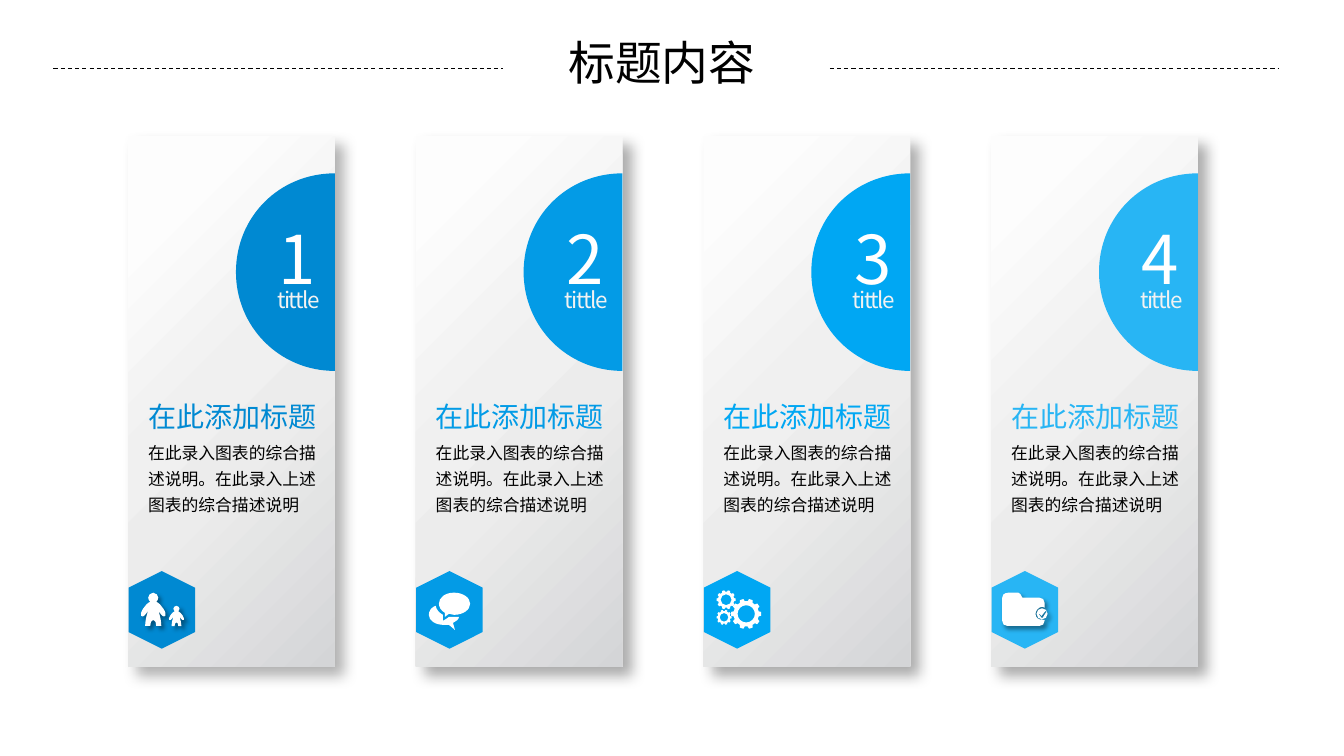
import dataclasses
import math

import pptx
import pptx.dml.color
import pptx.enum.dml
import pptx.enum.shapes
import pptx.enum.text
import pptx.oxml
import pptx.oxml.ns
import pptx.util

Inches = pptx.util.Inches
Pt = pptx.util.Pt
Kind = pptx.enum.shapes.MSO_SHAPE
Align = pptx.enum.text.PP_ALIGN
qn = pptx.oxml.ns.qn
NS = pptx.oxml.ns.nsdecls("a")


@dataclasses.dataclass(frozen=True)
class Theme:
    font: str = "Noto Sans CJK SC"
    ink: str = "000000"
    white: str = "FFFFFF"
    pale: str = "F2F2F2"
    blues: tuple = ("0089D2", "039BE6", "00A7F3", "28B5F4")
    greys: tuple = ((45, "F0F0F0"), (60, "ECECEC"), (100, "D4D5D7"))
    light: str = "FDFDFD"
    title: float = 33.4
    digit: float = 48
    label: float = 16
    head: float = 20
    body: float = 12


THEME = Theme()
HEAD = "在此添加标题"
BODY = "在此录入图表的综合描述说明。在此录入上述图表的综合描述说明"
FIRST, LAST, ICON_TOP = 1.27, 9.83, 5.72

HALF = [(98, 0), (98, 196), (43, 196, 0, 152, 0, 98), (0, 43, 43, 0, 98, 0)]
SIDE = [(0, 0), (3, 0, 5, 3, 5, 5), (5, 7, 4, 8, 3, 9),
        (8, 11, 14, 21, 12, 23), (10, 25, 8, 22, 5, 18),
        (7, 23, 8, 29, 8, 33), (3, 33), (3, 30, 2, 27, 0, 27)]
FRONT = [(38, 16), (29, 16, 23, 21, 23, 27), (23, 30, 25, 34, 29, 36),
         (29, 40), (33, 37), (35, 37, 36, 38, 38, 38),
         (47, 38, 54, 33, 54, 27), (54, 21, 47, 16, 38, 16)]
BACK = [(43, 40), (33, 40), (32, 41, 27, 44, 27, 44), (27, 38),
        (23, 36, 20, 32, 20, 29), (16, 30, 13, 34, 13, 38),
        (13, 44, 20, 48, 28, 48), (33, 48), (39, 53), (37, 46),
        (40, 45, 43, 42, 43, 40)]
FOLDER = [(44, 37), (44, 34, 47, 30, 51, 30), (53, 31), (53, 26),
          (53, 23, 51, 21, 48, 21), (31, 21), (30, 18, 28, 16, 27, 16),
          (17, 16), (15, 16, 13, 17, 12, 18), (12, 19, 11, 20, 11, 21),
          (11, 44), (11, 47, 13, 49, 16, 49), (48, 49),
          (51, 49, 53, 47, 53, 44), (53, 43), (51, 43),
          (47, 43, 44, 41, 44, 37)]
CHECK = [(53, 38), (51, 41), (50, 41), (47, 37), (48, 37), (50, 39),
         (54, 34), (55, 35)]
ARCS = [(1, 0), (1, .55, .55, 1, 0, 1), (-.55, 1, -1, .55, -1, 0),
        (-1, -.55, -.55, -1, 0, -1), (.55, -1, 1, -.55, 1, 0)]
GEARS = [(42.5, 37, 15), (22.5, 23, 9.5), (20.5, 40.5, 7.5)]


def rgb(code):
    return pptx.dml.color.RGBColor.from_string(code)


def apply(item, look):
    for name, value in look.items():
        setattr(item, name, value)


def pairs(part):
    return list(zip(part[::2], part[1::2]))


def place(parts, x, y, scale):
    return [tuple(n * scale + (y if k % 2 else x) for k, n in enumerate(part))
            for part in parts]


def mirror(parts):
    back = []
    for last, part in zip(parts[-2::-1], parts[:0:-1]):
        spots = pairs(part)[-2::-1] + [last[-2:]]
        back.append(tuple(n for x, y in spots for n in (-x, y)))
    return parts + back


def gear(x, y, size, teeth=10):
    edge = []
    for k in range(teeth):
        for shift, reach in ((-.32, .84), (-.2, 1), (.2, 1), (.32, .84)):
            turn = 2 * math.pi * (k + shift) / teeth
            edge.append((reach * math.cos(turn), reach * math.sin(turn)))
    return [place(edge, x, y, size), place(ARCS, x, y, size * .57)]


def paint(shape, color):
    shape.shadow.inherit = False
    shape.line.fill.background()
    shape.fill.solid()
    shape.fill.fore_color.rgb = rgb(color)


def shade(shape, alpha, blur, dist):
    glow = shape.element.spPr.find(qn("a:effectLst"))
    glow.append(pptx.oxml.parse_xml(
        f'<a:outerShdw {NS} blurRad="{Pt(blur)}" dist="{Pt(dist)}" '
        f'dir="2700000" algn="tl" rotWithShape="0"><a:srgbClr val="000000">'
        f'<a:alpha val="{alpha * 1000}"/></a:srgbClr></a:outerShdw>'))


def bend(shape, rings):
    lines = iter(list(shape.element.spPr.iter(qn("a:lnTo"))))
    for part in (part for ring in rings for part in ring[1:]):
        line = next(lines)
        if len(part) == 6:
            curve = pptx.oxml.parse_xml(f"<a:cubicBezTo {NS}/>")
            line.addprevious(curve)
            for item in (line, next(lines), next(lines)):
                curve.append(item[0])
                item.getparent().remove(item)


def draw(shapes, rings, left, top, color):
    pen = None
    for ring in rings:
        spots = [(Inches(left + x / 100), Inches(top + y / 100))
                 for part in ring for x, y in pairs(part)]
        if pen is None:
            pen = shapes.build_freeform(*spots[0])
        else:
            pen.move_to(*spots[0])
        pen.add_line_segments(spots[1:], close=False)
        pen.add_line_segments([], close=True)
    shape = pen.convert_to_shape()
    bend(shape, rings)
    paint(shape, color)
    return shape


def write(shape, text, size, color, look=None, gap=None):
    frame = shape.text_frame
    apply(frame, {"word_wrap": True,
                  "vertical_anchor": pptx.enum.text.MSO_ANCHOR.TOP,
                  "auto_size": pptx.enum.text.MSO_AUTO_SIZE.SHAPE_TO_FIT_TEXT})
    para = frame.paragraphs[0]
    apply(para, {"line_spacing": 1, "alignment": Align.LEFT, **(look or {})})
    run = para.add_run()
    run.text = text
    apply(run.font, {"size": Pt(size), "name": THEME.font})
    run.font.color.rgb = rgb(color)
    props = run.font._element
    props.append(pptx.oxml.parse_xml(f'<a:ea {NS} typeface="{THEME.font}"/>'))
    if gap is not None:
        props.set("spc", str(gap))


def label(slide, box, *args, **more):
    write(slide.shapes.add_textbox(*map(Inches, box)), *args, **more)


def rule(slide, start, end, y):
    line = slide.shapes.add_connector(
        pptx.enum.shapes.MSO_CONNECTOR.STRAIGHT,
        *map(Inches, (start, y, end, y)))
    apply(line.line, {"width": Pt(.75),
                      "dash_style": pptx.enum.dml.MSO_LINE.DASH})
    line.line.color.rgb = rgb(THEME.ink)
    line.element.spPr.append(pptx.oxml.parse_xml(f"<a:effectLst {NS}/>"))


def panel(slide, left, first):
    shape = slide.shapes.add_shape(
        Kind.RECTANGLE, *map(Inches, (left, 1.35, 2.05, 5.26)))
    paint(shape, THEME.light)
    shape.fill.gradient()
    shape.fill.gradient_angle = 315
    stops = shape.element.spPr.find(qn("a:gradFill")).find(qn("a:gsLst"))
    for stop in list(stops):
        stops.remove(stop)
    for pos, color in ((15 if first else 11, THEME.light), *THEME.greys):
        stops.append(pptx.oxml.parse_xml(
            f'<a:gs {NS} pos="{pos * 1000}"><a:srgbClr val="{color}"/></a:gs>'))
    shade(shape, 30 if first else 32, 10, 9)


def card(slide, index, left, color):
    panel(slide, left, index == 0)
    badge = slide.shapes.add_shape(
        Kind.HEXAGON, *map(Inches, (left - .05, ICON_TOP, .77, .66)))
    badge.rotation = 270
    paint(badge, color)
    draw(slide.shapes, [HALF], left + 1.07, 1.72, color)
    label(slide, (left + 1.31, 2.11, .74, .91), str(index + 1),
          THEME.digit, THEME.white, {"alignment": Align.CENTER})
    label(slide, (left + 1.38, 2.79, .85, .37), "tittle",
          THEME.label, THEME.pale, gap=-100)
    label(slide, (left + .1, 3.91, 1.93, .44), HEAD, THEME.head, color)
    label(slide, (left + .1, 4.28, 1.88, .89), BODY,
          THEME.body, THEME.ink, {"line_spacing": 1.3})


def icon(slide, left, parts, lit):
    shapes = slide.shapes if lit else slide.shapes.add_group_shape().shapes
    for rings in parts:
        shape = draw(shapes, rings, left, ICON_TOP, THEME.white)
        if lit:
            shade(shape, 40, 3, 3)


def main():
    deck = pptx.Presentation()
    apply(deck, {"slide_width": Inches(13.33), "slide_height": Inches(7.5)})
    slide = deck.slides.add_slide(deck.slide_layouts[5])
    title = slide.shapes.title
    apply(title, {"left": Inches(5.41), "top": Inches(.28),
                  "width": Inches(2.31), "height": Inches(.66)})
    write(title, "标题内容", THEME.title, THEME.ink,
          {"alignment": Align.CENTER})
    for start in (.53, 8.23):
        rule(slide, start, start + 4.46, .68)
    lefts = [FIRST + (LAST - FIRST) * k / 3 for k in range(4)]
    for index, (left, color) in enumerate(zip(lefts, THEME.blues)):
        card(slide, index, left, color)
    man = mirror(SIDE)
    family = [[place(man, 25, 16, 1), place(man, 48, 29, .61)]]
    chat = [[BACK], [FRONT]]
    cogs = [gear(*spot) for spot in GEARS]
    folder = [[FOLDER, place(ARCS, 50.5, 37, 5.5), CHECK]]
    icons = ((family, True), (chat, False), (cogs, False), (folder, True))
    for left, (parts, lit) in zip(lefts, icons):
        icon(slide, left, parts, lit)
    deck.save("out.pptx")


if __name__ == "__main__":
    main()
